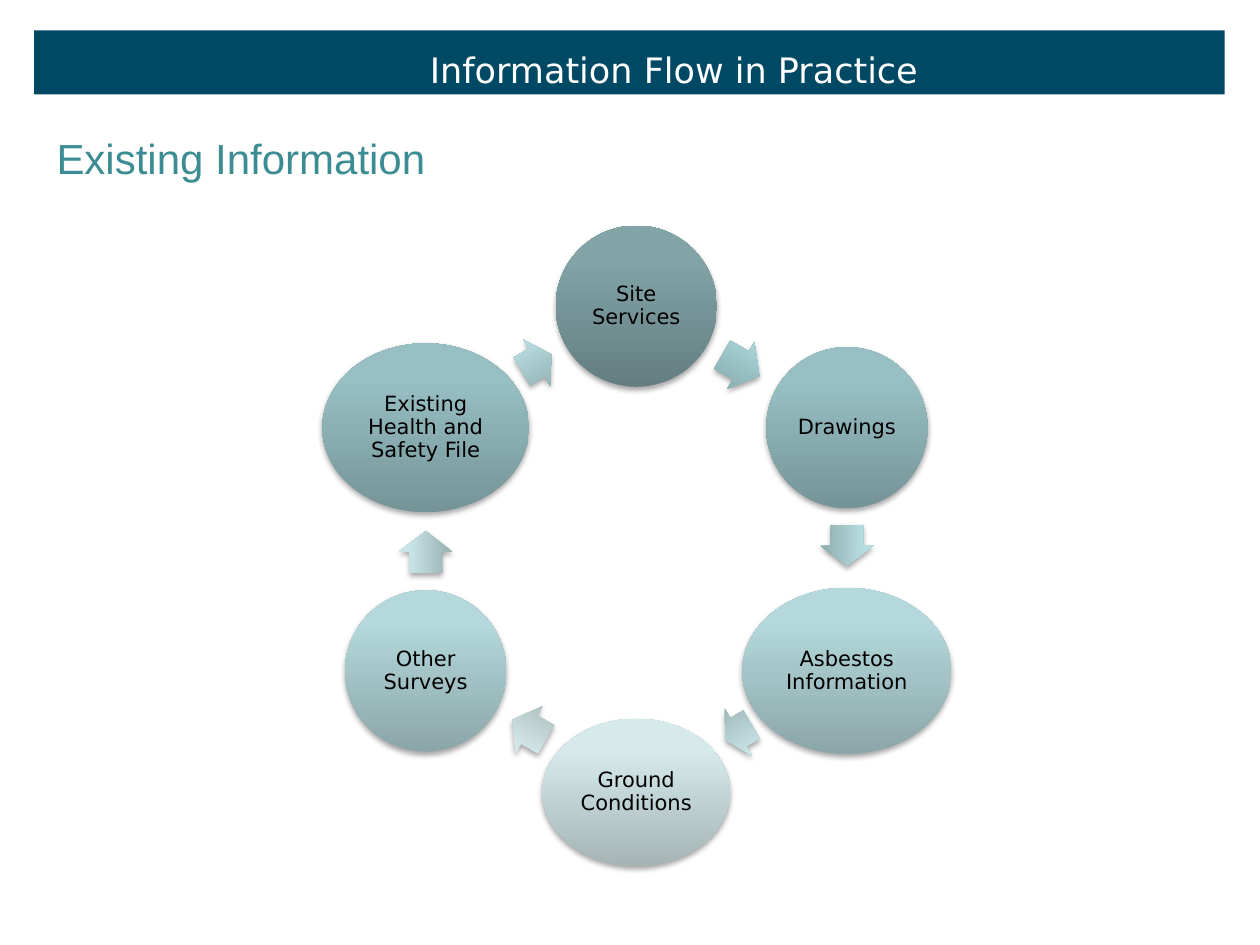
from math import cos, radians, sin

from lxml import etree
from pptx import Presentation
from pptx.dml.color import RGBColor
from pptx.enum.shapes import MSO_SHAPE
from pptx.enum.text import MSO_ANCHOR, MSO_AUTO_SIZE, PP_ALIGN
from pptx.oxml import parse_xml
from pptx.oxml.ns import nsdecls, qn
from pptx.util import Pt

ELLIPSE, ARROW, RECTANGLE = MSO_SHAPE.OVAL, MSO_SHAPE.RIGHT_ARROW, MSO_SHAPE.RECTANGLE
CENTER, MIDDLE, BOTTOM = PP_ALIGN.CENTER, MSO_ANCHOR.MIDDLE, MSO_ANCHOR.BOTTOM
NO_AUTOFIT = MSO_AUTO_SIZE.NONE
PX = 9144

COLORS = {"banner": "004964", "white": "FFFFFF", "black": "000000", "heading": "3C8C93"}
SHADES = {
    "darkest": ("647E81", "82A4A7", "82A6A9"),
    "dark": ("759497", "98C0C4", "98C2C5"),
    "medium": ("81A3A6", "A8D4D8", "A7D6DA"),
    "soft": ("8DAAAC", "B7DCDF", "B7DEE1"),
    "light": ("8BA6A8", "B4D8DB", "B4D9DC"),
    "lighter": ("99AFB1", "C7E4E6", "C7E5E8"),
    "pale": ("A5B5B6", "D6EAEC", "D6ECEE"),
    "palest": ("A6B5B6", "D7EBED", "D8ECEE"),
}


def add_shaded(kind, center_x, center_y, width, height, shade):
    shape = page.shapes.add_shape(
        kind, round((center_x - width / 2) * PX), round((center_y - height / 2) * PX),
        width * PX, height * PX)
    shape.line.fill.background()
    stops = "".join(
        f'<a:gs pos="{position}"><a:srgbClr val="{color}"/></a:gs>'
        for position, color in zip((0, 80000, 100000), SHADES[shade]))
    gradient = parse_xml(
        f'<a:gradFill {nsdecls("a")} rotWithShape="1"><a:gsLst>{stops}</a:gsLst>'
        '<a:lin ang="16200000" scaled="0"/></a:gradFill>')
    properties = shape._element.spPr
    properties.find(qn("a:prstGeom")).addnext(gradient)
    effects = etree.SubElement(properties, qn("a:effectLst"))
    effects.append(parse_xml(
        f'<a:outerShdw {nsdecls("a")} blurRad="40000" dist="23000" dir="5400000" '
        'rotWithShape="0"><a:srgbClr val="000000"><a:alpha val="35000"/>'
        '</a:srgbClr></a:outerShdw>'))
    return shape


def format_text(para, size, font, color):
    para.font.size = Pt(size)
    para.font.name = font
    para.font.color.rgb = RGBColor.from_string(COLORS[color])


deck = Presentation()
deck.slide_width, deck.slide_height = 1000 * PX, 750 * PX
page = deck.slides.add_slide(deck.slide_layouts[5])

banner = page.shapes.add_shape(RECTANGLE, 27 * PX, 24 * PX, 945 * PX, 51 * PX)
banner.shadow.inherit = False
banner.fill.solid()
banner.fill.fore_color.rgb = RGBColor.from_string(COLORS["banner"])
banner.line.fill.background()

title = page.shapes.title
title.left, title.top, title.width, title.height = 94 * PX, 15 * PX, 882 * PX, 61 * PX
title._element.addprevious(banner._element)
title.text_frame.text = "Information Flow in Practice"
title.text_frame.vertical_anchor = BOTTOM
title.text_frame.auto_size = NO_AUTOFIT
para = title.text_frame.paragraphs[0]
para.alignment = CENTER
para.line_spacing = 0.75
format_text(para, 20, "DejaVu Sans", "white")

RING_X, RING_Y, RADIUS = 505, 436, 193
NODES = [
    ("Site Services", 128, 128, "darkest"),
    ("Drawings", 128, 128, "dark"),
    ("Asbestos Information", 166, 132, "light"),
    ("Ground Conditions", 149, 117, "pale"),
    ("Other Surveys", 128, 128, "light"),
    ("Existing Health and Safety File", 164, 134, "dark"),
]
ARROWS = [
    (588, 290, 34, "medium"),
    (672, 433, 33, "soft"),
    (586, 581, 24, "lighter"),
    (420, 579, 31, "palest"),
    (338, 438, 33, "lighter"),
    (426, 288, 27, "soft"),
]
for index, (node, arrow) in enumerate(zip(NODES, ARROWS)):
    label, width, height, shade = node
    angle = radians(60 * index - 90)
    circle = add_shaded(ELLIPSE, RING_X + RADIUS * cos(angle),
                        RING_Y + RADIUS * sin(angle), width, height, shade)
    frame = circle.text_frame
    frame.word_wrap = True
    frame.vertical_anchor = MIDDLE
    frame.margin_left = frame.margin_right = 2 * PX
    frame.margin_top = frame.margin_bottom = 2 * PX
    frame.text = label
    para = frame.paragraphs[0]
    para.alignment = CENTER
    para.line_spacing = 0.9
    format_text(para, 12, "DejaVu Sans", "black")

    center_x, center_y, length, shade = arrow
    pointer = add_shaded(ARROW, center_x, center_y, length, 43, shade)
    pointer.rotation = 30 + 60 * index
    pointer.adjustments[0] = 0.6
    pointer.adjustments[1] = 0.5

heading = page.shapes.add_textbox(35 * PX, 100 * PX, 341 * PX, 52 * PX)
heading.text_frame.word_wrap = True
heading.text_frame.text = "Existing Information"
format_text(heading.text_frame.paragraphs[0], 24, "Arial", "heading")

deck.save("out.pptx")
